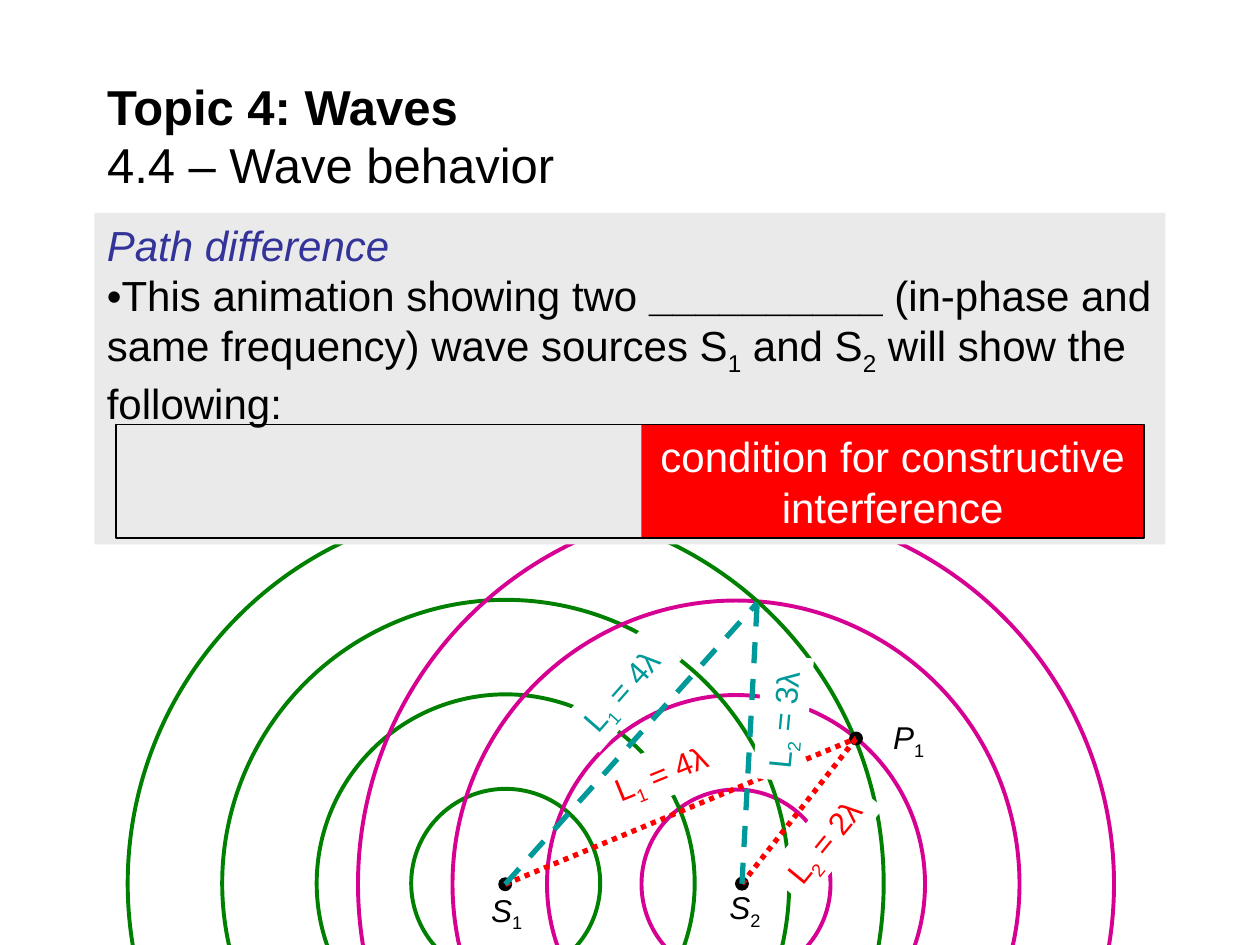
from lxml.etree import SubElement
from pptx import Presentation
from pptx.dml.color import RGBColor
from pptx.enum.dml import MSO_LINE_DASH_STYLE as Dash
from pptx.enum.shapes import MSO_CONNECTOR as Connector, MSO_SHAPE as Shape
from pptx.enum.text import MSO_ANCHOR as Anchor, PP_ALIGN as Align
from pptx.oxml.ns import qn
from pptx.util import Pt

THEME = dict(
    font="Arial", title=28, body=24, label=18,
    black="000000", white="FFFFFF", panel="EAEAEA", heading="333399",
    red="FF0000", green="008000", magenta="D60093", teal="009999",
)

# A run is (text, styles): b = bold, i = italic, s = subscript.
TITLE = [[("Topic 4: Waves", "b"), ("\v", ""), ("4.4 – Wave behavior", "")]]
HEADING = [("Path difference", "i")]
BODY = [
    ("•This animation showing two ", ""), ("__________ ", "b"),
    ("(in-phase and same frequency) wave sources S", ""), ("1", "s"),
    (" and S", ""), ("2", "s"), (" will show the following:", ""),
]
CONDITION = [[("condition for constructive interference", "")]]

# Boxes are left, top, width, height.
TITLE_BOX = (54, 41.8, 612, 70.6)
PANEL_BOX = (54, 121.7, 612, 189.4)
FORMULA_BOX = (66.2, 242.6, 587.6, 64.8)
CONDITION_BOX = (366.5, 242.6, 287.3, 64.8)
POINT_LABEL = (33.1, 28.8)
PATH_LABEL = (71.3, 28.8)

WAVELENGTH = 54
WAVE_COUNT = 4
WAVES = [((289, 504.8), "green"), ((420.6, 505.2), "magenta")]

DOT = 7.2
S1, S2, P1, CREST = (288.7, 505.3), (424, 505), (489.2, 422), (432.7, 344.5)
POINTS = [  # centre, letter, index, label left and top
    (S1, "S", "1", (273.6, 505.4)),
    (S2, "S", "2", (409.7, 504)),
    (P1, "P", "1", (503.3, 406.8)),
]
PATHS = [  # start, end, colour, dash, index, length, label centre, rotation
    (S1, P1, "red", Dash.ROUND_DOT, "1", "4λ", (378.4, 441.4), 337.8),
    (S2, P1, "red", Dash.ROUND_DOT, "2", "2λ", (471.2, 480.2), 309.3),
    (S1, CREST, "teal", Dash.DASH, "1", "4λ", (355.3, 393.8), 311.3),
    (S2, CREST, "teal", Dash.DASH, "2", "3λ", (447.5, 410.4), 275.5),
]


def rgb(name):
    return RGBColor.from_string(THEME[name])


def centred(centre, width, height):
    """Box of the given size around a centre."""
    return centre[0] - width / 2, centre[1] - height / 2, width, height


def write(frame, paragraphs, size="label", colors=("black",), align=Align.LEFT,
          anchor=Anchor.TOP, wrap=True):
    """Fill a frame; colors holds one name per paragraph, the last one repeating."""
    frame.word_wrap = wrap
    frame.vertical_anchor = anchor
    for number, runs in enumerate(paragraphs):
        paragraph = frame.add_paragraph() if number else frame.paragraphs[0]
        paragraph.alignment = align
        for text, styles in runs:
            if text == "\v":
                paragraph.add_line_break()
                continue
            run = paragraph.add_run()
            run.text = text
            font = run.font
            font.name, font.size = THEME["font"], Pt(THEME[size])
            font.bold, font.italic = "b" in styles, "i" in styles
            font.color.rgb = rgb(colors[min(number, len(colors) - 1)])
            if "s" in styles:
                run._r.get_or_add_rPr().set("baseline", "-25000")


def add_shape(slide, kind, box, fill=None, line=None, weight=1):
    shape = slide.shapes.add_shape(kind, *map(Pt, box))
    shape.shadow.inherit = False
    if fill:
        shape.fill.solid()
        shape.fill.fore_color.rgb = rgb(fill)
    else:
        shape.fill.background()
    if line:
        shape.line.color.rgb = rgb(line)
        shape.line.width = Pt(weight)
    else:
        shape.line.fill.background()
    return shape


def add_waves(slide):
    for count in range(1, WAVE_COUNT + 1):
        diameter = 2 * count * WAVELENGTH
        for centre, color in WAVES:
            add_shape(slide, Shape.OVAL, centred(centre, diameter, diameter),
                      line=color, weight=2.25)


def add_points(slide):
    for centre, letter, index, corner in POINTS:
        add_shape(slide, Shape.OVAL, centred(centre, DOT, DOT),
                  fill="black", line="black", weight=0.75)
        label = slide.shapes.add_textbox(*map(Pt, corner + POINT_LABEL))
        write(label.text_frame, [[(letter, "i"), (index, "s")]], wrap=False)


def add_paths(slide):
    for start, end, color, dash, index, length, centre, rotation in PATHS:
        path = slide.shapes.add_connector(
            Connector.STRAIGHT, *map(Pt, start + end))
        path.line.color.rgb = rgb(color)
        path.line.width = Pt(3)
        path.line.dash_style = dash
        SubElement(path._element.spPr, qn("a:effectLst"))
        label = add_shape(slide, Shape.RECTANGLE,
                          centred(centre, *PATH_LABEL), fill="white")
        label.rotation = rotation
        write(label.text_frame, [[("L", ""), (index, "s"), (f" = {length}", "")]],
              colors=(color,), wrap=False)


def add_panel(slide):
    panel = add_shape(slide, Shape.RECTANGLE, PANEL_BOX, fill="panel")
    write(panel.text_frame, [HEADING, BODY], size="body",
          colors=("heading", "black"))
    condition = add_shape(slide, Shape.RECTANGLE, CONDITION_BOX, fill="red")
    write(condition.text_frame, CONDITION, size="body", colors=("white",),
          align=Align.CENTER)
    add_shape(slide, Shape.RECTANGLE, FORMULA_BOX, line="black")


def main():
    deck = Presentation()
    deck.slide_width, deck.slide_height = Pt(720), Pt(540)
    slide = deck.slides.add_slide(deck.slide_layouts[5])
    title = slide.shapes.title
    title.left, title.top, title.width, title.height = map(Pt, TITLE_BOX)
    write(title.text_frame, TITLE, size="title", anchor=Anchor.MIDDLE)
    add_waves(slide)
    add_points(slide)
    add_paths(slide)
    add_panel(slide)
    deck.save("out.pptx")


if __name__ == "__main__":
    main()
